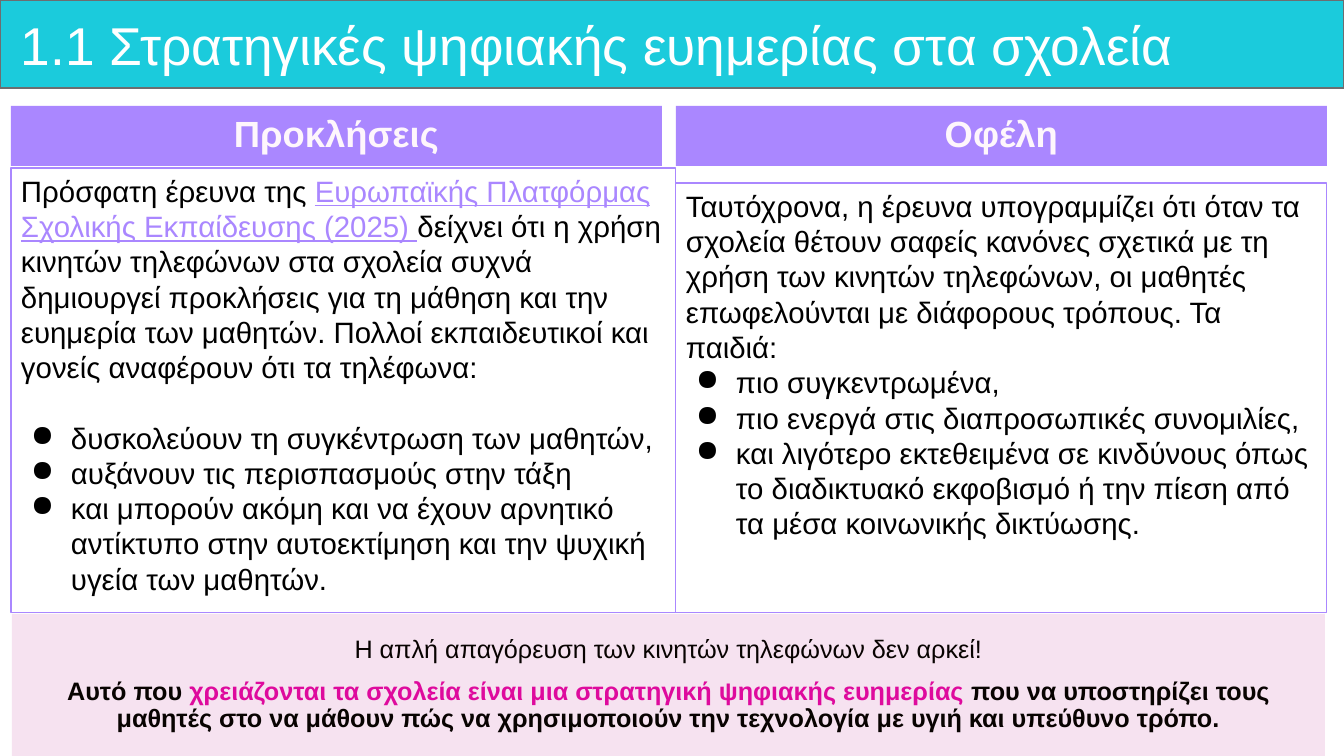
import pptx
import pptx.util
import pptx.dml.color
import pptx.enum.shapes
import pptx.enum.text
import lxml.etree
from dataclasses import dataclass

PX = 12192000 / 1344
ALIGN = pptx.enum.text.PP_ALIGN
ANCHOR = pptx.enum.text.MSO_ANCHOR


@dataclass(frozen=True)
class Theme:
    font: str = "Arial"
    teal: str = "1BCBDC"
    grey: str = "6C6E70"
    violet: str = "AA87FF"
    pale: str = "FEF6FC"
    pink: str = "F6E2F0"
    rose: str = "DE0A9D"
    ink: str = "080301"
    black: str = "000000"
    white: str = "FFFFFF"
    title: int = 38
    head: int = 26
    body: int = 21
    note: int = 18


THEME = Theme()


def px(num):
    return pptx.util.Emu(round(num * PX))


def rgb(code):
    return pptx.dml.color.RGBColor.from_string(code)


def apply(target, values):
    for name, value in values.items():
        setattr(target, name, value)


def panel(slide, box, fill=None, line=None, width=0.75):
    kind = pptx.enum.shapes.MSO_SHAPE.RECTANGLE
    shape = slide.shapes.add_shape(kind, *map(px, box))
    shape.shadow.inherit = False
    if fill:
        shape.fill.solid()
        shape.fill.fore_color.rgb = rgb(fill)
    else:
        shape.fill.background()
    if line:
        shape.line.color.rgb = rgb(line)
        shape.line.width = pptx.util.Pt(width)
    else:
        shape.line.fill.background()
    return shape


def frame(shape, anchor, pads=(10, 5, 10, 5)):
    text = shape.text_frame
    sides = ("margin_left", "margin_top", "margin_right", "margin_bottom")
    apply(text, dict(zip(sides, map(px, pads))))
    apply(text, {"word_wrap": True, "vertical_anchor": anchor,
                 "auto_size": pptx.enum.text.MSO_AUTO_SIZE.NONE})
    return text


def bullet(para):
    props = para._p.get_or_add_pPr()
    props.set("marL", str(px(50)))
    props.set("indent", str(px(-40)))
    space = "{http://schemas.openxmlformats.org/drawingml/2006/main}"
    color = lxml.etree.SubElement(props, space + "buClr")
    lxml.etree.SubElement(color, space + "srgbClr", val=THEME.black)
    lxml.etree.SubElement(props, space + "buChar", char="●")


def write(para, parts, size, color, layout):
    """Add runs; each part is a text and its own font values."""
    apply(para, layout)
    for text, extra in parts:
        run = para.add_run()
        run.text = text
        look = {"name": THEME.font, "size": pptx.util.Pt(size)} | extra
        run.font.color.rgb = rgb(look.pop("color", color))
        apply(run.font, look)


def banner(slide, box, text):
    left, top, width, height = box
    bar = panel(slide, box, THEME.teal, THEME.grey, 1)
    title = slide.shapes.title
    title.element.addprevious(bar.element)
    place = (left + 11, top + 9, width - 28, height - 9)
    apply(title, dict(zip(("left", "top", "width", "height"),
                          map(px, place))))
    para = frame(title, ANCHOR.MIDDLE, (10, 6, 6, 6)).paragraphs[0]
    write(para, [(text, {})], THEME.title, THEME.white,
          {"alignment": ALIGN.LEFT, "line_spacing": 0.9})


def header(slide, box, text):
    shape = panel(slide, box, THEME.violet)
    para = frame(shape, ANCHOR.MIDDLE).paragraphs[0]
    write(para, [(text, {"bold": True})], THEME.head, THEME.pale,
          {"alignment": ALIGN.CENTER, "line_spacing": 0.9})


def column(slide, box, intro, items, gap):
    """Outlined text with bullets, the first set apart by gap points."""
    text = frame(panel(slide, box, line=THEME.violet), ANCHOR.TOP)
    left = {"alignment": ALIGN.LEFT}
    write(text.paragraphs[0], intro, THEME.body, THEME.black, left)
    for num, item in enumerate(items):
        para = text.add_paragraph()
        space = pptx.util.Pt(0 if num else gap)
        apply(para, left | {"space_before": space})
        bullet(para)
        write(para, [(item, {})], THEME.body, THEME.black, {})


def footer(slide, box, lines):
    text = frame(panel(slide, box, THEME.pink), ANCHOR.MIDDLE)
    for num, parts in enumerate(lines):
        para = text.add_paragraph() if num else text.paragraphs[0]
        space = pptx.util.Pt(10 if num else 0)
        write(para, parts, THEME.note, THEME.ink,
              {"alignment": ALIGN.CENTER, "line_spacing": 0.9,
               "space_before": space})


def main():
    deck = pptx.Presentation()
    apply(deck, {"slide_width": px(1344), "slide_height": px(756)})
    slide = deck.slides.add_slide(deck.slide_layouts[5])
    banner(slide, (0, 0, 1344, 88),
           "1.1 Στρατηγικές ψηφιακής ευημερίας στα σχολεία")
    link = {"color": THEME.violet, "underline": True}
    column(slide, (11, 168, 665, 445), [
        ("Πρόσφατη έρευνα της ", {}),
        ("Ευρωπαϊκής Πλατφόρμας Σχολικής Εκπαίδευσης (2025) ", link),
        ("δείχνει ότι η χρήση κινητών τηλεφώνων στα σχολεία συχνά "
         "δημιουργεί προκλήσεις για τη μάθηση και την ευημερία των "
         "μαθητών. Πολλοί εκπαιδευτικοί και γονείς αναφέρουν ότι τα "
         "τηλέφωνα:", {}),
    ], [
        "δυσκολεύουν τη συγκέντρωση των μαθητών,",
        "αυξάνουν τις περισπασμούς στην τάξη",
        "και μπορούν ακόμη και να έχουν αρνητικό αντίκτυπο στην "
        "αυτοεκτίμηση και την ψυχική υγεία των μαθητών.",
    ], 25)
    column(slide, (676, 183, 651, 430), [
        ("Ταυτόχρονα, η έρευνα υπογραμμίζει ότι όταν τα σχολεία θέτουν "
         "σαφείς κανόνες σχετικά με τη χρήση των κινητών τηλεφώνων, οι "
         "μαθητές επωφελούνται με διάφορους τρόπους. Τα παιδιά:", {}),
    ], [
        "πιο συγκεντρωμένα,",
        "πιο ενεργά στις διαπροσωπικές συνομιλίες,",
        "και λιγότερο εκτεθειμένα σε κινδύνους όπως το διαδικτυακό "
        "εκφοβισμό ή την πίεση από τα μέσα κοινωνικής δικτύωσης.",
    ], 0)
    for left, text in ((11, "Προκλήσεις"), (676, "Οφέλη")):
        header(slide, (left, 106, 651, 60), text)
    bold = {"bold": True}
    footer(slide, (12, 614, 1313, 142), [
        [("Η απλή απαγόρευση των κινητών τηλεφώνων δεν αρκεί!", {})],
        [("Αυτό που ", bold),
         ("χρειάζονται τα σχολεία είναι μια στρατηγική ψηφιακής "
          "ευημερίας ", bold | {"color": THEME.rose}),
         ("που να υποστηρίζει τους μαθητές στο να μάθουν πώς να "
          "χρησιμοποιούν την τεχνολογία με υγιή και υπεύθυνο τρόπο.",
          bold)],
    ])
    deck.save("out.pptx")


if __name__ == "__main__":
    main()
